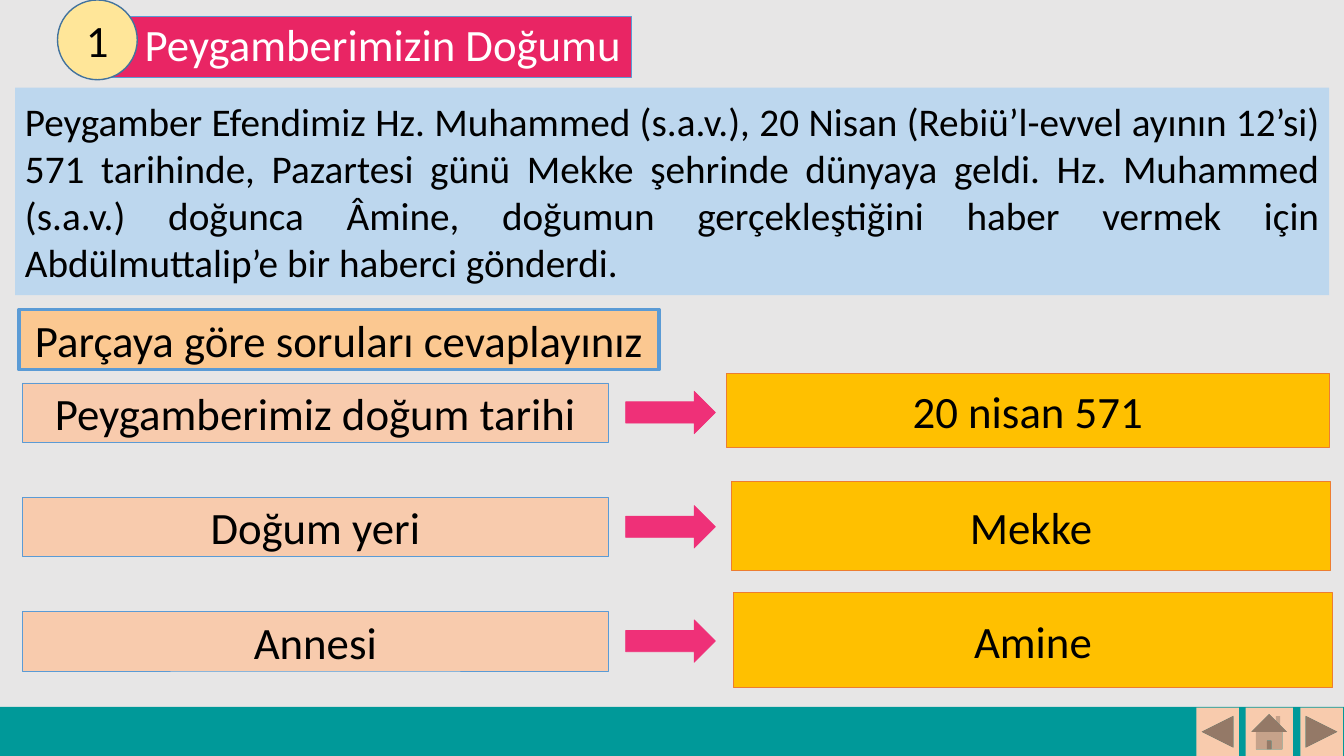
from pptx import Presentation
from pptx.dml.color import RGBColor
from pptx.enum.shapes import MSO_SHAPE
from pptx.enum.text import MSO_ANCHOR, MSO_AUTO_SIZE, PP_ALIGN
from pptx.util import Cm, Pt

COLORS = {
    "background": "E7E6E6",
    "black": "000000",
    "white": "FFFFFF",
    "passage": "BDD7EE",
    "instruction": "FBC891",
    "peach": "F8CBAD",
    "blue": "5B9BD5",
    "dark blue": "43739E",
    "teal": "009999",
    "arrow": "EF3078",
    "gold": "FFC000",
    "orange": "ED7D31",
    "title": "E92564",
    "badge": "FFE699",
}
PASSAGE = (
    "Peygamber Efendimiz Hz. Muhammed (s.a.v.), 20 Nisan (Rebiü’l-evvel ayının 12’si) "
    "571 tarihinde, Pazartesi günü Mekke şehrinde dünyaya geldi. Hz. Muhammed (s.a.v.) "
    "doğunca Âmine, doğumun gerçekleştiğini haber vermek için Abdülmuttalip’e bir "
    "haberci gönderdi."
)
# Question, answer, and the answer box as left, top, width, height in cm
QUESTIONS = [
    ("Peygamberimiz doğum tarihi", "20 nisan 571", (18.31, 9.42, 15.19, 1.85)),
    ("Doğum yeri", "Mekke", (18.44, 12.14, 15.09, 2.24)),
    ("Annesi", "Amine", (18.49, 14.94, 15.09, 2.39)),
]
ROW_STEP = 2.88


def color(name):
    return RGBColor.from_string(COLORS[name])


def paint(shape, fill, line=None, line_width=0.5):
    shape.fill.solid()
    shape.fill.fore_color.rgb = color(fill)
    if line:
        shape.line.color.rgb = color(line)
        shape.line.width = Pt(line_width)
    else:
        shape.line.fill.background()


def write(shape, text, size=32, ink="black", align=PP_ALIGN.CENTER):
    frame = shape.text_frame
    frame.text = text
    frame.word_wrap = True
    frame.auto_size = MSO_AUTO_SIZE.NONE
    frame.vertical_anchor = MSO_ANCHOR.MIDDLE
    para = frame.paragraphs[0]
    para.alignment = align
    font = para.runs[0].font
    font.name = "Calibri"
    font.size = Pt(size)
    font.color.rgb = color(ink)


def add_figure(slide, kind, place, fill, line=None, line_width=0.5):
    """Add a preset shape at place, given as left, top, width, height in cm."""
    shape = slide.shapes.add_shape(kind, *map(Cm, place))
    shape.shadow.inherit = False
    paint(shape, fill, line, line_width)
    return shape


def add_title(slide):
    title = slide.shapes.title
    title.left, title.top, title.width, title.height = map(Cm, (2.24, 0.41, 13.67, 1.55))
    paint(title, "title", "blue", 0.75)
    write(title, "Peygamberimizin Doğumu", ink="white", align=PP_ALIGN.RIGHT)
    title.text_frame.paragraphs[0].line_spacing = 0.9
    badge = add_figure(slide, MSO_SHAPE.OVAL, (1.45, 0, 2.01, 2.01), "badge", "dark blue", 1)
    write(badge, "1")


def add_question_row(slide, row, question, answer, answer_place):
    offset = row * ROW_STEP
    question_box = add_figure(
        slide, MSO_SHAPE.RECTANGLE, (0.56, 9.65 + offset, 14.78, 1.5), "peach", "blue")
    write(question_box, question)
    add_figure(
        slide, MSO_SHAPE.RIGHT_ARROW, (15.77, 9.86 + offset, 2.26, 1.07), "arrow", "arrow")
    answer_box = add_figure(slide, MSO_SHAPE.RECTANGLE, answer_place, "gold", "orange")
    write(answer_box, answer)


def add_navigation(slide):
    add_figure(slide, MSO_SHAPE.RECTANGLE, (0, 17.81, 33.87, 1.24), "teal")
    forward = MSO_SHAPE.ACTION_BUTTON_FORWARD_OR_NEXT
    back_button = add_figure(slide, forward, (30.15, 17.83, 1.07, 1.22), "peach")
    back_button._element.spPr.xfrm.set("flipH", "1")
    add_figure(slide, MSO_SHAPE.ACTION_BUTTON_HOME, (31.39, 17.83, 1.19, 1.22), "peach")
    add_figure(slide, forward, (32.77, 17.83, 1.07, 1.22), "peach")


def main():
    deck = Presentation()
    deck.slide_width, deck.slide_height = Cm(33.87), Cm(19.05)
    slide = deck.slides.add_slide(deck.slide_layouts.get_by_name("Title Only"))
    slide.background.fill.solid()
    slide.background.fill.fore_color.rgb = color("background")

    add_title(slide)
    passage = add_figure(slide, MSO_SHAPE.RECTANGLE, (0.38, 2.21, 33.12, 5.23), "passage")
    write(passage, PASSAGE, size=28, align=PP_ALIGN.JUSTIFY)
    instruction = add_figure(
        slide, MSO_SHAPE.RECTANGLE, (0.48, 7.8, 16.13, 1.52), "instruction", "blue", 2.25)
    write(instruction, "Parçaya göre soruları cevaplayınız")
    for row, (question, answer, answer_place) in enumerate(QUESTIONS):
        add_question_row(slide, row, question, answer, answer_place)
    add_navigation(slide)
    deck.save("out.pptx")


if __name__ == "__main__":
    main()
